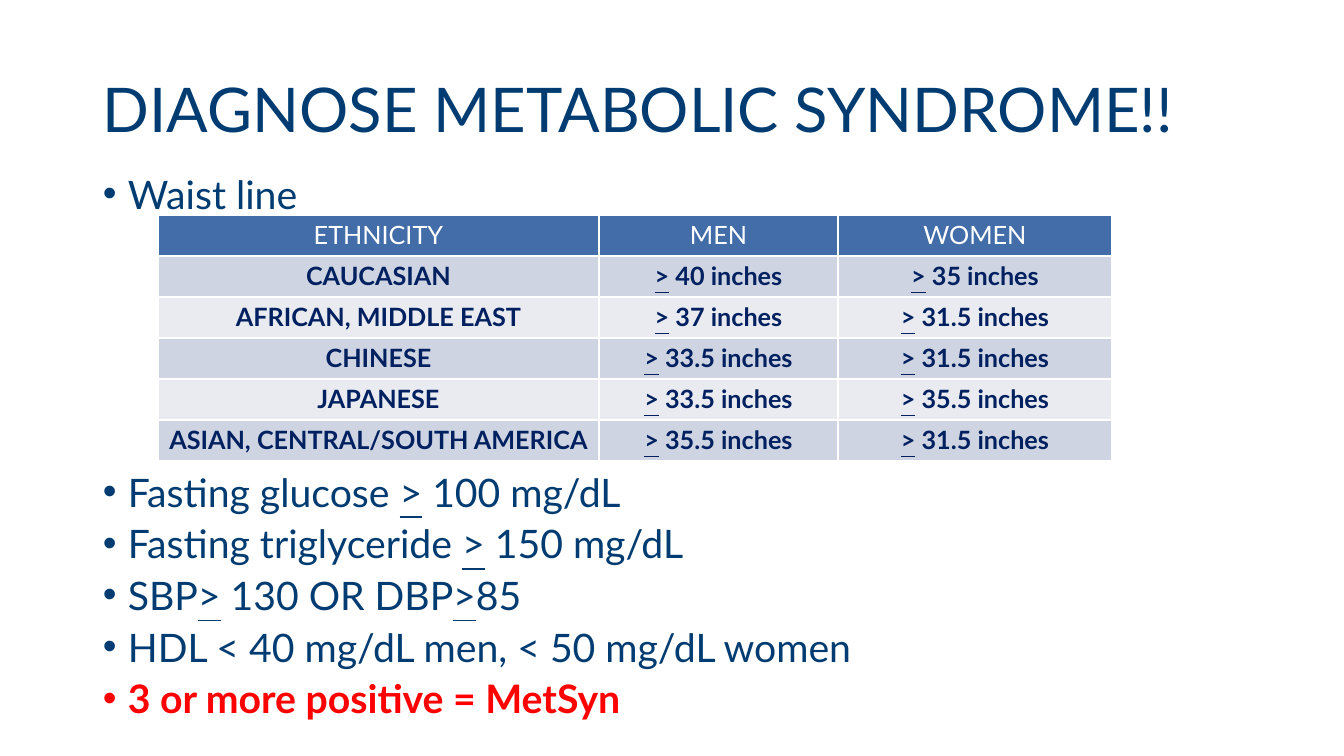
from itertools import groupby

from lxml.etree import SubElement
from pptx import Presentation
from pptx.dml.color import RGBColor
from pptx.enum.text import MSO_ANCHOR, PP_ALIGN
from pptx.oxml.ns import qn
from pptx.util import Emu, Pt


def px(length):
    """Turn slide pixels into EMU."""
    return Emu(round(length * 914400 / 100.8))


def color(value):
    """Turn a hex string into a colour."""
    return RGBColor.from_string(value)


class SlideBuilder:
    """Draw styled elements on the current slide."""

    font_name = "Lato"
    navy = "003C71"
    cell_navy = "002060"
    red = "FF0000"
    white = "FFFFFF"
    header_fill = "426DA9"
    band_fills = ("CFD4E2", "E9EBF1")

    def __init__(self, slide):
        """Keep the slide to draw on."""
        self.slide = slide

    def add_runs(self, paragraph, text, size, hex_color, bold=False):
        """Fill a paragraph, underlining each greater-than sign."""
        for is_sign, letters in groupby(text, key=lambda letter: letter == ">"):
            run = paragraph.add_run()
            run.text = "".join(letters)
            run.font.name = self.font_name
            run.font.size = Pt(size)
            run.font.bold = bold
            run.font.underline = is_sign
            run.font.color.rgb = color(hex_color)

    def text_frame(self, left, top, width, height):
        """Add a wrapping text box and return its frame."""
        shape = self.slide.shapes.add_textbox(px(left), px(top), px(width), px(height))
        shape.text_frame.word_wrap = True
        return shape.text_frame

    def title(self, text, left, top, width, height):
        """Add the slide title."""
        frame = self.text_frame(left, top, width, height)
        frame.vertical_anchor = MSO_ANCHOR.MIDDLE
        paragraph = frame.paragraphs[0]
        paragraph.line_spacing = 0.9
        self.add_runs(paragraph, text, 44, self.navy)

    def bullets(self, items, left, top, width, height):
        """Add a bulleted list of (text, emphasised) items."""
        frame = self.text_frame(left, top, width, height)
        for index, (text, emphasised) in enumerate(items):
            paragraph = frame.add_paragraph() if index else frame.paragraphs[0]
            paragraph.line_spacing = 0.8
            paragraph.space_before = Pt(10 if index else 0)
            properties = paragraph._p.get_or_add_pPr()
            properties.set("marL", str(px(25)))
            properties.set("indent", str(-px(25)))
            SubElement(properties, qn("a:buFont"), typeface="Arial")
            SubElement(properties, qn("a:buChar"), char="•")
            hex_color = self.red if emphasised else self.navy
            self.add_runs(paragraph, text, 28, hex_color, emphasised)

    def borders(self, cell):
        """Give a cell thin white borders."""
        properties = cell._tc.get_or_add_tcPr()
        for side in ("a:lnL", "a:lnR", "a:lnT", "a:lnB"):
            line = SubElement(properties, qn(side), w=str(Pt(1)))
            fill = SubElement(line, qn("a:solidFill"))
            SubElement(fill, qn("a:srgbClr"), val=self.white)

    def table(self, rows, left, top, column_widths, row_height):
        """Add a banded table with a header row."""
        table = self.slide.shapes.add_table(
            len(rows), len(column_widths), px(left), px(top),
            px(sum(column_widths)), px(row_height * len(rows))).table
        for column, width in zip(table.columns, column_widths):
            column.width = px(width)
        for row_index, values in enumerate(rows):
            table.rows[row_index].height = px(row_height)
            is_header = row_index == 0
            fill = self.header_fill if is_header else self.band_fills[(row_index - 1) % 2]
            hex_color = self.white if is_header else self.cell_navy
            for cell, text in zip(table.rows[row_index].cells, values):
                self.borders(cell)
                cell.fill.solid()
                cell.fill.fore_color.rgb = color(fill)
                paragraph = cell.text_frame.paragraphs[0]
                paragraph.alignment = PP_ALIGN.CENTER
                self.add_runs(paragraph, text, 18, hex_color, not is_header)


def main():
    """Build and save the presentation."""
    presentation = Presentation()
    presentation.slide_width = px(1344)
    presentation.slide_height = px(756)
    builder = SlideBuilder(presentation.slides.add_slide(presentation.slide_layouts[6]))

    builder.title("DIAGNOSE METABOLIC SYNDROME!!", 93, 40, 1159, 146)
    builder.bullets([("Waist line", False)], 93, 174, 1159, 48)
    builder.bullets([
        ("Fasting glucose > 100 mg/dL", False),
        ("Fasting triglyceride > 150 mg/dL", False),
        ("SBP> 130 OR DBP>85", False),
        ("HDL < 40 mg/dL men, < 50 mg/dL women", False),
        ("3 or more positive = MetSyn", True),
    ], 93, 472, 1159, 260)

    waist_limits = [
        ("CAUCASIAN", "40", "35"),
        ("AFRICAN, MIDDLE EAST", "37", "31.5"),
        ("CHINESE", "33.5", "31.5"),
        ("JAPANESE", "33.5", "35.5"),
        ("ASIAN, CENTRAL/SOUTH AMERICA", "35.5", "31.5"),
    ]
    rows = [("ETHNICITY", "MEN", "WOMEN")]
    rows += [(group, f"> {men} inches", f"> {women} inches")
             for group, men, women in waist_limits]
    builder.table(rows, 158, 215, (441, 239, 274), 41)

    presentation.save("out.pptx")


if __name__ == "__main__":
    main()
